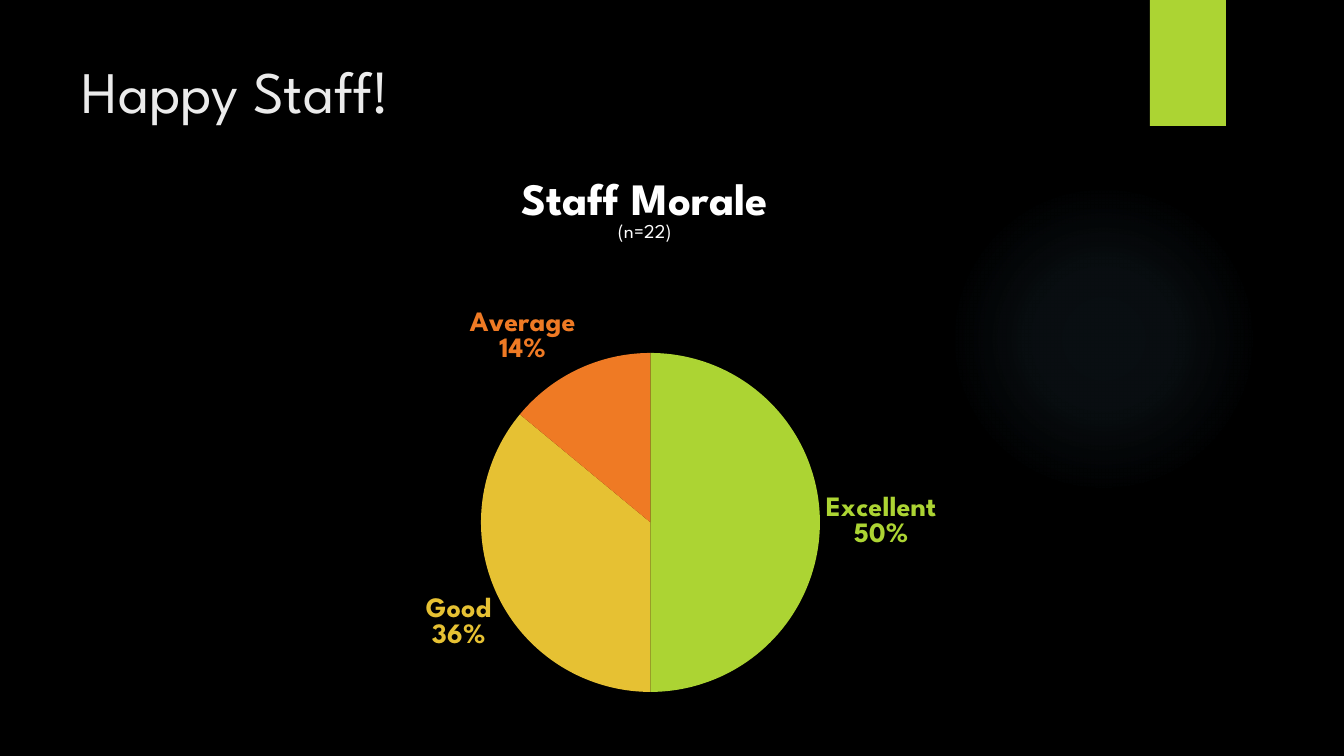
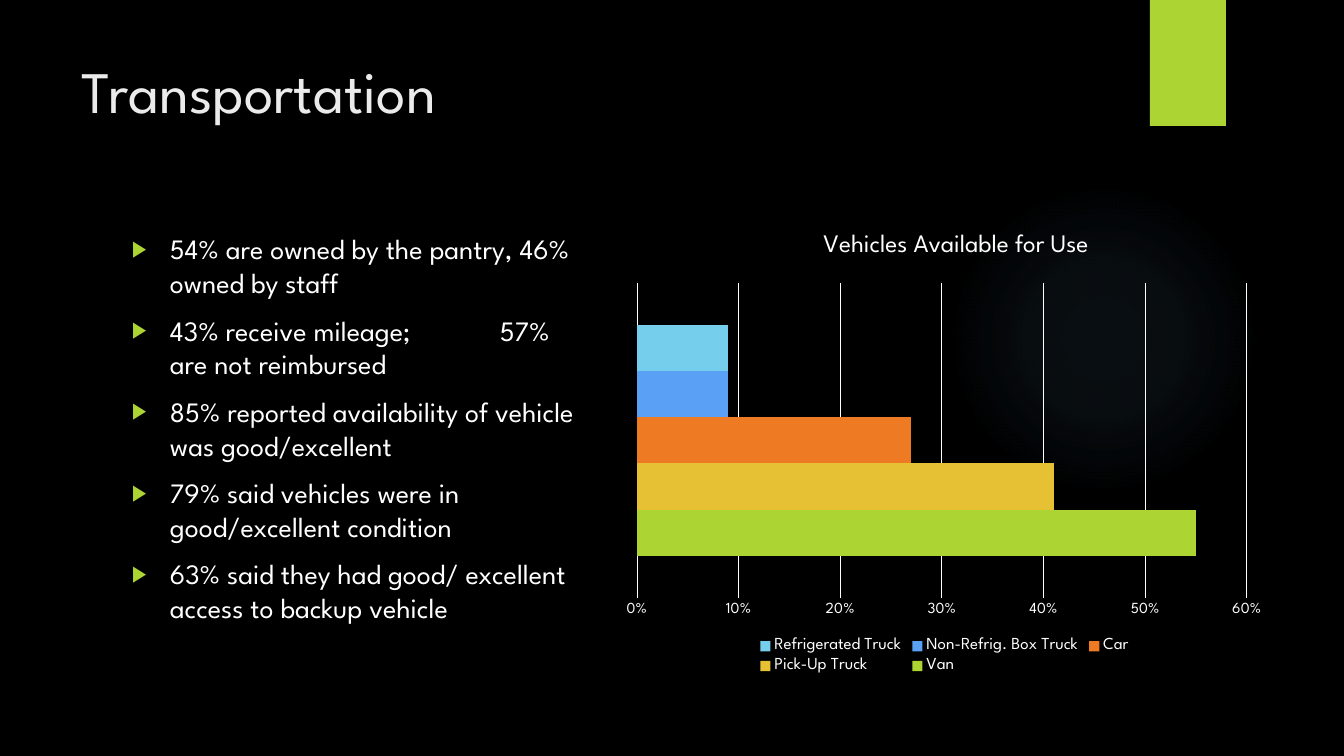
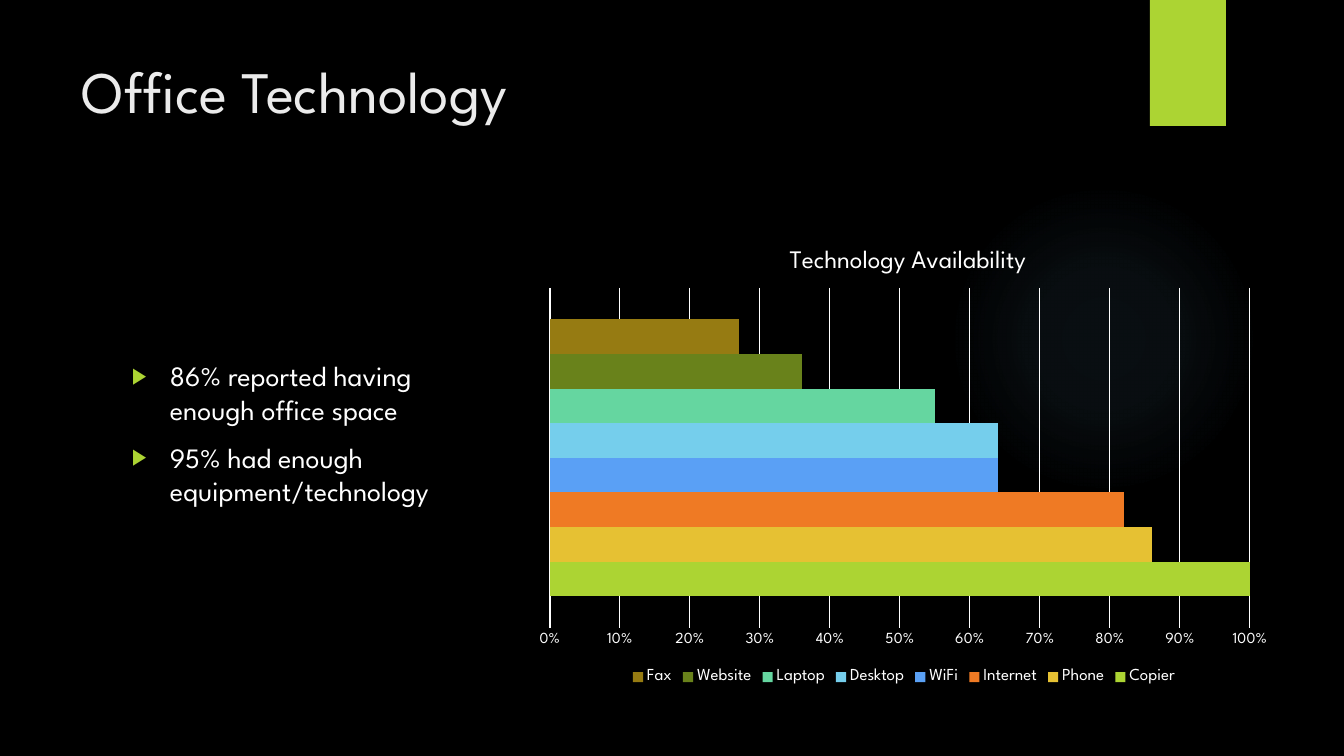
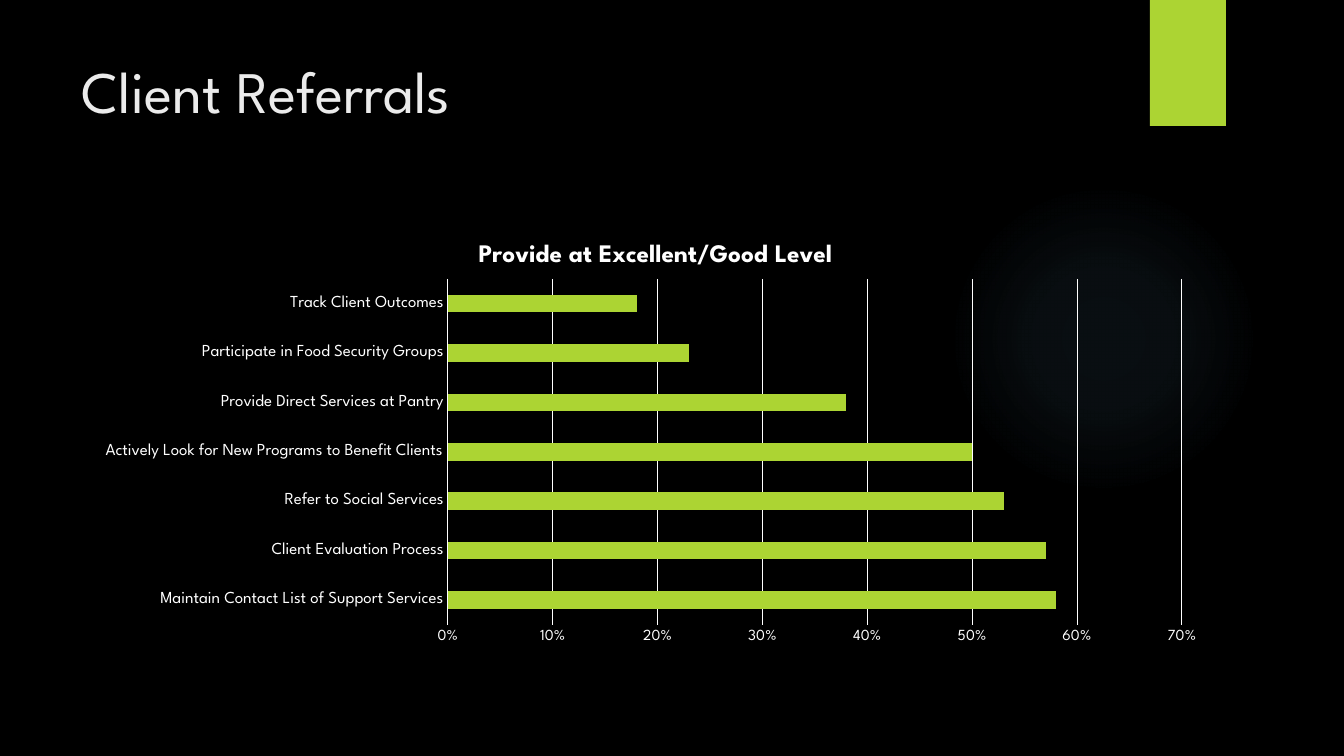
import pptx
import pptx.util
import pptx.oxml
import pptx.oxml.ns
import pptx.dml.color
import pptx.chart.data
import pptx.enum.chart
import pptx.enum.shapes

COLORS = {
    "black": "000000", "white": "FFFFFF", "title": "EBEBEB", "glow": "7AC4F0",
    "lime": "ACD433", "gold": "E6C133", "orange": "EF7A24", "blue": "5AA0F5",
    "sky": "75CEEC", "mint": "65D6A0", "olive": "69821B", "bronze": "967B12",
}
CYCLE = ["lime", "gold", "orange", "blue", "sky", "mint", "olive", "bronze"]
FONT = "League Spartan"
SCALE = 914400 / 100.8
KINDS = pptx.enum.chart.XL_CHART_TYPE
SHAPES = pptx.enum.shapes.MSO_SHAPE


def px(size):
    return pptx.util.Emu(round(size * SCALE))


def rgb(name):
    return pptx.dml.color.RGBColor.from_string(COLORS[name])


def xml(tag, body):
    spaces = pptx.oxml.ns.nsdecls("a", "c")
    return pptx.oxml.parse_xml(f"<{tag} {spaces}>{body}</{tag}>")


class Deck:
    def __init__(self):
        self.show = pptx.Presentation()
        self.show.slide_width, self.show.slide_height = px(1344), px(756)
        self.slide = None

    def style(self, font, size, color="white", bold=False):
        font.name, font.size, font.bold = FONT, pptx.util.Pt(size), bold
        font.color.rgb = rgb(color)

    def text(self, para, words, size, color="white", bold=False):
        run = para.add_run()
        run.text = words
        self.style(run.font, size, color, bold)

    def shape(self, kind, box, color):
        shape = self.slide.shapes.add_shape(kind, *map(px, box))
        shape.shadow.inherit = False
        shape.fill.solid()
        shape.fill.fore_color.rgb = rgb(color)
        shape.line.fill.background()
        return shape

    def glow(self):
        shape = self.shape(SHAPES.OVAL, (949, 184, 310, 310), "glow")
        stops = "".join(
            f'<a:gs pos="{spot * 1000}"><a:srgbClr val="{COLORS["glow"]}">'
            f'<a:alpha val="{alpha * 1000}"/></a:srgbClr></a:gs>'
            for spot, alpha in ((0, 7), (36, 6), (69, 0)))
        fade = xml("a:gradFill", f'<a:gsLst>{stops}</a:gsLst><a:path path="circle">'
                   '<a:fillToRect l="50000" t="50000" r="50000" b="50000"/></a:path>')
        solid = shape.element.spPr.find(pptx.oxml.ns.qn("a:solidFill"))
        shape.element.spPr.replace(solid, fade)

    def frame(self, box):
        frame = self.slide.shapes.add_textbox(*map(px, box)).text_frame
        frame.word_wrap = True
        return frame

    def page(self, title):
        self.slide = self.show.slides.add_slide(self.show.slide_layouts[6])
        fill = self.slide.background.fill
        fill.solid()
        fill.fore_color.rgb = rgb("black")
        self.glow()
        self.shape(SHAPES.RECTANGLE, (1150, 0, 76, 126), "lime")
        self.text(self.frame((72, 50, 1037, 154)).paragraphs[0], title, 42, "title")

    def bullets(self, box, items, tab=368):
        frame = self.frame(box)
        for i, item in enumerate(items):
            para = frame.add_paragraph() if i else frame.paragraphs[0]
            props = para._p.get_or_add_pPr()
            props.set("marL", str(px(38)))
            props.set("indent", str(-px(38)))
            color = f'<a:srgbClr val="{COLORS["lime"]}"/>'
            props.append(xml("a:buClr", color))
            for tag, key, value in (("buSzPct", "val", "80000"), ("buFont", "typeface", "Arial"),
                                    ("buChar", "char", "▶")):
                mark = xml(f"a:{tag}", "")
                mark.set(key, value)
                props.append(mark)
            if "\t" in item:
                props.append(xml("a:tabLst", f'<a:tab pos="{px(tab)}" algn="l"/>'))
            if i:
                para.space_before = pptx.util.Pt(10)
            self.text(para, item, 20)

    def place(self, node, index, box, spot, inner=False):
        old = node.find(pptx.oxml.ns.qn("c:layout"))
        if old is not None:
            node.remove(old)
        left, top, width, height = box
        parts = {"x": (spot[0] - left) / width, "y": (spot[1] - top) / height}
        if inner:
            parts.update(w=spot[2] / width, h=spot[3] / height)
        body = '<c:layoutTarget val="inner"/>' if inner else ""
        body += '<c:xMode val="edge"/><c:yMode val="edge"/>'
        body += "".join(f'<c:{key} val="{value:.4f}"/>' for key, value in parts.items())
        node.insert(index, xml("c:layout", f"<c:manualLayout>{body}</c:manualLayout>"))

    def chart(self, kind, box, plot, spot, lines, names, series, form="0%"):
        data = pptx.chart.data.CategoryChartData(number_format=form)
        data.categories = names
        for name, values in series:
            data.add_series(name, values)
        chart = self.slide.shapes.add_chart(kind, *map(px, box), data).chart
        self.style(chart.font, 10)
        chart.has_title, chart.has_legend = True, False
        frame = chart.chart_title.text_frame
        for i, (words, size, bold) in enumerate(lines):
            para = frame.add_paragraph() if i else frame.paragraphs[0]
            self.text(para, words, size, bold=bold)
        self.place(chart.chart_title._element, 1, box, spot)
        area = chart._chartSpace.chart.plotArea
        self.place(area, 0, box, plot, True)
        return chart

    def pie(self, box, plot, spot, lines, names, values):
        chart = self.chart(KINDS.PIE, box, plot, spot, lines, names,
                           [("Series 1", values)], "General")
        chart.plots[0].vary_by_categories = True
        series = chart.plots[0].series[0]
        flags = "".join(f'<c:show{key} val="{value}"/>' for key, value in (
            ("LegendKey", 0), ("Val", 0), ("CatName", 1), ("SerName", 0),
            ("Percent", 1), ("BubbleSize", 0))) + "<c:separator>\n</c:separator>"
        form = '<c:numFmt formatCode="0%" sourceLinked="0"/><c:spPr><a:noFill/></c:spPr>'
        body = ""
        for i, (value, color) in enumerate(zip(values, CYCLE)):
            fill = series.points[i].format.fill
            fill.solid()
            fill.fore_color.rgb = rgb(color)
            look = '<c:delete val="1"/>'
            if value:
                look = (f'{form}<c:txPr><a:bodyPr/><a:p><a:pPr><a:defRPr sz="2000" b="1">'
                        f'<a:solidFill><a:srgbClr val="{COLORS[color]}"/></a:solidFill>'
                        f'<a:latin typeface="{FONT}"/></a:defRPr></a:pPr></a:p></c:txPr>'
                        f'<c:dLblPos val="outEnd"/>{flags}')
            body += f'<c:dLbl><c:idx val="{i}"/>{look}</c:dLbl>'
        labels = xml("c:dLbls", f'{body}{form}<c:dLblPos val="outEnd"/>{flags}')
        series._element.find(pptx.oxml.ns.qn("c:cat")).addprevious(labels)

    def bars(self, box, plot, spot, title, names, series, top, bold=False):
        chart = self.chart(KINDS.BAR_CLUSTERED, box, plot, spot, [(title, 18, bold)],
                           names, series)
        bars = chart.plots[0]
        bars.gap_width, bars.vary_by_categories = 182, False
        for item, color in zip(bars.series, CYCLE):
            item.format.fill.solid()
            item.format.fill.fore_color.rgb = rgb(color)
        scale, side = chart.value_axis, chart.category_axis
        scale.minimum_scale, scale.maximum_scale, scale.major_unit = 0, top, 0.1
        scale.tick_labels.number_format = "0%"
        scale.tick_labels.number_format_is_linked = False
        scale.format.line.fill.background()
        for axis, size in ((scale, 11), (side, 12)):
            axis.major_tick_mark = pptx.enum.chart.XL_TICK_MARK.NONE
            self.style(axis.tick_labels.font, size)
        scale.has_major_gridlines = True
        for line in (scale.major_gridlines.format.line, side.format.line):
            line.color.rgb, line.width = rgb("white"), pptx.util.Pt(0.75)
        if len(series) > 1:
            side.visible = False
            chart.has_legend = True
            chart.legend.position = pptx.enum.chart.XL_LEGEND_POSITION.BOTTOM
            chart.legend.include_in_layout = False
            self.style(chart.legend.font, 12)


def main():
    deck = Deck()

    deck.page("Happy Staff!")
    deck.pie((114, 165, 1069, 560), (215, 353, 871, 339), (518, 179),
             [("Staff Morale", 32, True), ("(n=22)", 14, False)],
             ["Excellent", "Good", "Average", "Fair", "Poor"], [50, 36, 14, 0, 0])

    deck.page("Transportation")
    deck.bullets((122, 227, 480, 463), [
        "54% are owned by the pantry, 46% owned by staff",
        "43% receive mileage;\t57% are not reimbursed",
        "85% reported availability of vehicle was good/excellent",
        "79% said vehicles were in good/excellent condition",
        "63% said they had good/ excellent access to backup vehicle"])
    deck.bars((614, 227, 661, 451), (637, 283, 610, 315), (819, 227),
              "Vehicles Available for Use", ["1"],
              [("Van", [0.55]), ("Pick-Up Truck", [0.41]), ("Car", [0.27]),
               ("Non-Refrig. Box Truck", [0.09]), ("Refrigerated Truck", [0.09])], 0.6)

    deck.page("Office Technology")
    deck.bullets((122, 354, 379, 241), [
        "86% reported having enough office space",
        "95% had enough equipment/technology"])
    deck.bars((525, 227, 758, 462), (550, 288, 700, 340), (785, 243),
              "Technology Availability", ["1"],
              [("Copier", [1]), ("Phone", [0.86]), ("Internet", [0.82]), ("WiFi", [0.64]),
               ("Desktop", [0.64]), ("Laptop", [0.55]), ("Website", [0.36]),
               ("Fax", [0.27])], 1)

    deck.page("Client Referrals")
    deck.bars((83, 224, 1137, 429), (448, 279, 734, 346), (474, 237),
              "Provide at Excellent/Good Level",
              ["Maintain Contact List of Support Services", "Client Evaluation Process",
               "Refer to Social Services", "Actively Look for New Programs to Benefit Clients",
               "Provide Direct Services at Pantry", "Participate in Food Security Groups",
               "Track Client Outcomes"],
              [("Series 1", [0.58, 0.57, 0.53, 0.5, 0.38, 0.23, 0.18])], 0.7, True)

    deck.show.save("out.pptx")


if __name__ == "__main__":
    main()
